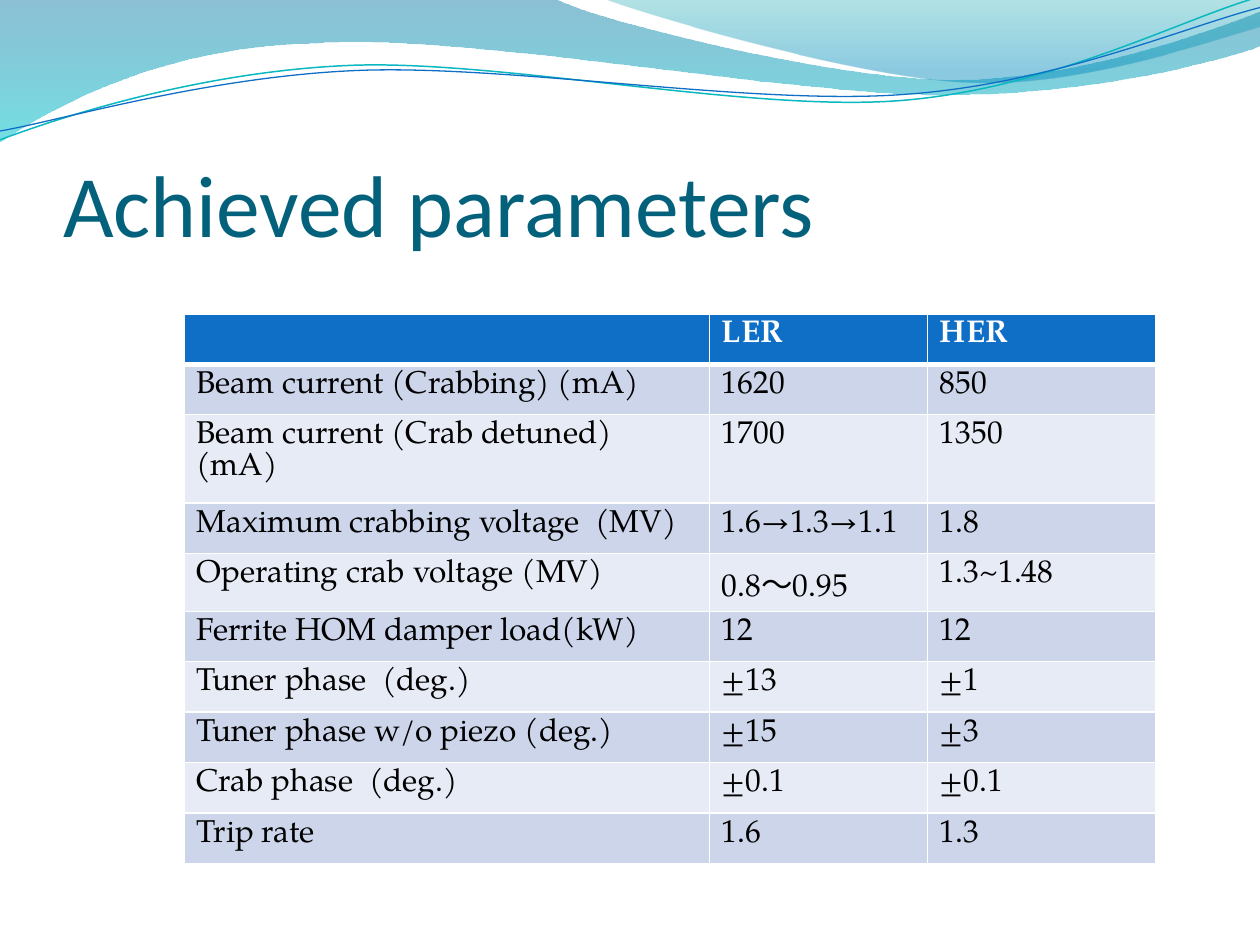
import pptx
import pptx.dml.color
import pptx.enum.text
import pptx.oxml
import pptx.oxml.ns
import pptx.util
from pptx.util import Inches

COLORS = {
    "title": "04617B", "header": "0F6FC6", "band_dark": "CCD5EA", "band_light": "E7EBF5",
    "white": "FFFFFF", "black": "000000", "teal_line": "0AB8BF", "blue_line": "0F6FC6",
    "deep_blue": "0074A1", "cyan": "00C6CF", "teal": "00A1A9", "sky": "008BBF",
}
RGB = {name: pptx.dml.color.RGBColor.from_string(value) for name, value in COLORS.items()}
NAMESPACE = pptx.oxml.ns.nsdecls("a")


def add_wave(shapes, start, segments, close):
    """Draw an outline; a segment holds one point (line) or three (cubic Bezier)."""
    points = [(Inches(x), Inches(y)) for segment in segments for x, y in segment]
    builder = shapes.build_freeform(Inches(start[0]), Inches(start[1]))
    builder.add_line_segments(points, close=close)
    shape = builder.convert_to_shape()
    shape.shadow.inherit = False
    # Join each three straight steps of a curved segment into one Bezier
    steps = iter(shape.element.spPr.findall(".//" + pptx.oxml.ns.qn("a:lnTo")))
    for segment in segments:
        segment_steps = [next(steps) for point in segment]
        if len(segment) == 3:
            curve = pptx.oxml.parse_xml(f"<a:cubicBezTo {NAMESPACE}/>")
            segment_steps[0].addprevious(curve)
            for step in segment_steps:
                curve.append(step[0])
                step.getparent().remove(step)
    return shape


def add_text(paragraph, text, font, size, color, bold=False):
    run = paragraph.add_run()
    run.text = text
    run.font.name = font
    run.font.size = pptx.util.Pt(size)
    run.font.bold = bold
    run.font.color.rgb = RGB[color]


presentation = pptx.Presentation()
presentation.slide_width = Inches(10)
presentation.slide_height = Inches(7.5)
slide = presentation.slides.add_slide(presentation.slide_layouts[6])

# Filled waves: start, segments, gradient stops (position, colour, opacity in percent)
filled_waves = [
    ((0, 0), [
        [(4.4, -0.01)],
        [(4.76, 0.17), (6.64, 0.63), (7.58, 0.63)],
        [(8.53, 0.63), (9.58, 0.26), (10, 0.09)],
        [(10.01, 0.36)],
        [(9.83, 0.44), (8.7, 0.76), (7.46, 0.75)],
        [(6.22, 0.75), (3.82, 0.28), (2.57, 0.34)],
        [(1.29, 0.36), (0.46, 0.83), (-0.01, 1.13)],
        [(0, 0)],
    ], [(0, "deep_blue", 45), (1, "cyan", 55)]),
    ((4.79, -0.01), [
        [(5.09, 0.11), (6.82, 0.62), (7.69, 0.65)],
        [(8.56, 0.69), (9.61, 0.32), (10, 0.21)],
        [(10, 0)],
        [(4.79, -0.01)],
    ], [(0, "teal", 30), (0.8, "sky", 45)]),
]
for start, segments, stops in filled_waves:
    wave = add_wave(slide.shapes, start, segments, close=True)
    wave.line.fill.background()
    wave.fill.gradient()
    wave.fill.gradient_angle = 270
    for stop, (position, color, opacity) in zip(wave.fill.gradient_stops, stops):
        stop.position = position
        stop.color.rgb = RGB[color]
    color_elements = wave.element.spPr.findall(".//" + pptx.oxml.ns.qn("a:srgbClr"))
    for element, (position, color, opacity) in zip(color_elements, stops):
        element.append(pptx.oxml.parse_xml(f'<a:alpha {NAMESPACE} val="{opacity * 1000}"/>'))

line_waves = [
    ((0, 1.11), [
        [(0.48, 0.93), (1.58, 0.57), (2.77, 0.52)],
        [(3.95, 0.47), (5.93, 0.89), (7.13, 0.8)],
        [(8.33, 0.71), (9.38, 0.15), (9.98, -0.02)],
    ], "teal_line", 0.85),
    ((0, 1.04), [
        [(0.47, 0.96), (1.64, 0.61), (2.83, 0.56)],
        [(4.03, 0.51), (5.97, 0.84), (7.17, 0.75)],
        [(8.36, 0.67), (9.41, 0.21), (10, 0.06)],
    ], "blue_line", 0.75),
]
for start, segments, color, width in line_waves:
    wave = add_wave(slide.shapes, start, segments, close=False)
    wave.fill.background()
    wave.line.color.rgb = RGB[color]
    wave.line.width = pptx.util.Pt(width)

title = slide.shapes.add_textbox(Inches(0.5), Inches(0.77), Inches(9.08), Inches(1.25))
title_frame = title.text_frame
title_frame.word_wrap = True
title_frame.vertical_anchor = pptx.enum.text.MSO_ANCHOR.BOTTOM
title_frame.margin_left = title_frame.margin_right = title_frame.margin_bottom = 0
title_frame.margin_top = Inches(0.05)
add_text(title_frame.paragraphs[0], "Achieved parameters", "Calibri", 50, "title")

rows = [
    ("", "LER", "HER"),
    ("Beam current (Crabbing) (mA)", "1620", "850"),
    ("Beam current (Crab detuned) (mA)", "1700", "1350"),
    ("Maximum crabbing voltage  (MV)", "1.6→1.3→1.1", "1.8"),
    ("Operating crab voltage (MV)", "0.8～0.95", "1.3~1.48"),
    ("Ferrite HOM damper load(kW)", "12", "12"),
    ("Tuner phase  (deg.)", "±13", "±1"),
    ("Tuner phase w/o piezo (deg.)", "±15", "±3"),
    ("Crab phase  (deg.)", "±0.1", "±0.1"),
    ("Trip rate", "1.6", "1.3"),
]
column_widths = [4.17, 1.73, 1.81]
row_heights = [0.4, 0.4, 0.6, 0.4, 0.46] + [0.4] * 5
table = slide.shapes.add_table(len(rows), len(column_widths), Inches(1.46), Inches(2.49),
                               Inches(sum(column_widths)), Inches(sum(row_heights))).table
for column, width in zip(table.columns, column_widths):
    column.width = Inches(width)
for table_row, height in zip(table.rows, row_heights):
    table_row.height = Inches(height)

for row_index, row in enumerate(rows):
    is_header = row_index == 0
    band = "header" if is_header else ("band_light", "band_dark")[row_index % 2]
    border_widths = {"L": 1, "R": 1, "T": 3 if row_index == 1 else 1, "B": 3 if is_header else 1}
    for column_index, text in enumerate(row):
        cell = table.cell(row_index, column_index)
        cell_properties = cell._tc.get_or_add_tcPr()
        for side, width in border_widths.items():
            cell_properties.append(pptx.oxml.parse_xml(
                f'<a:ln{side} {NAMESPACE} w="{pptx.util.Pt(width)}"><a:solidFill>'
                f'<a:srgbClr val="{COLORS["white"]}"/></a:solidFill></a:ln{side}>'))
        cell.fill.solid()
        cell.fill.fore_color.rgb = RGB[band]
        if text:
            add_text(cell.text_frame.paragraphs[0], text, "TeX Gyre Pagella", 18,
                     "white" if is_header else "black", bold=is_header)

presentation.save("out.pptx")
